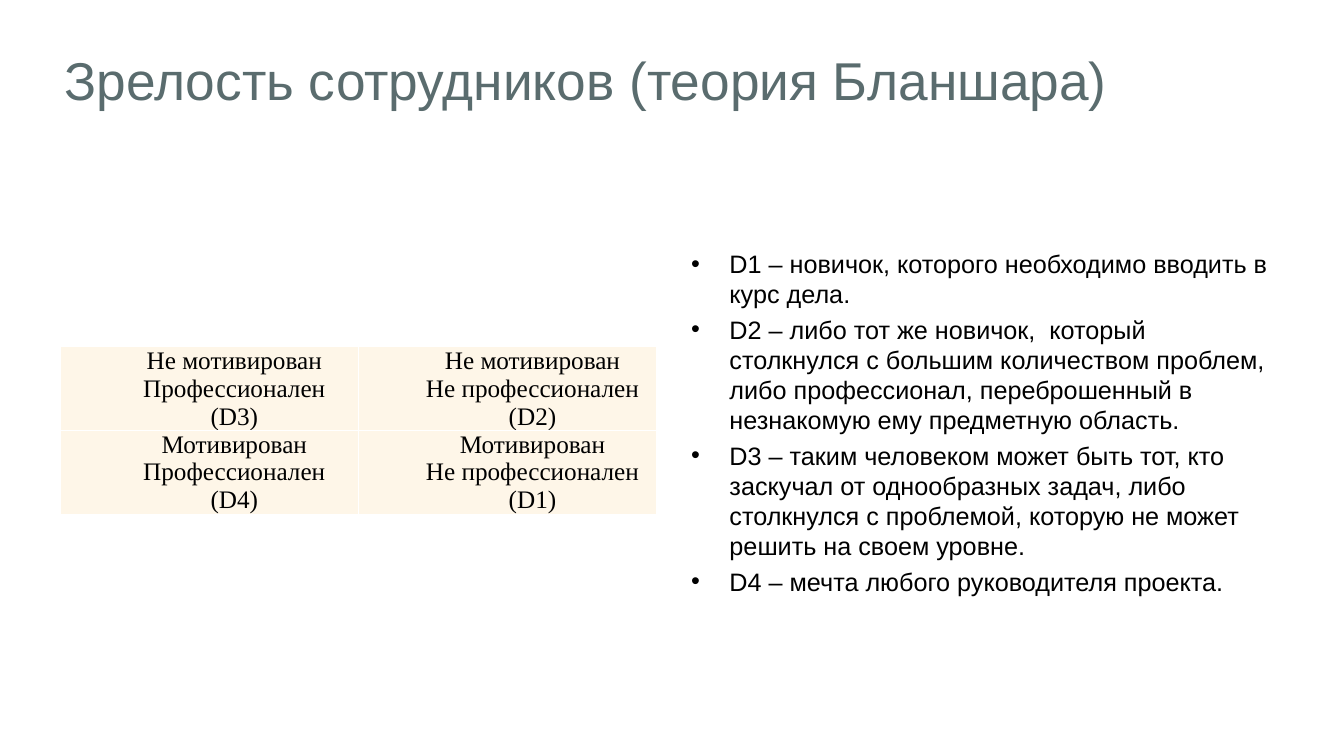
import pptx
import pptx.dml.color
import pptx.enum.text
import pptx.oxml
import pptx.oxml.ns
import pptx.util
from lxml import etree

Inches, Pt = pptx.util.Inches, pptx.util.Pt
ALIGN = pptx.enum.text.PP_ALIGN
MIDDLE = pptx.enum.text.MSO_ANCHOR.MIDDLE
qn = pptx.oxml.ns.qn

COLORS = {"title": "5A6C6E", "text": "000000", "cell": "FEF6E8", "border": "FFFFFF"}

W, H = 13.33, 7.5
MARGIN, GAP = 0.6, 0.3
COL_W = (W - 2 * MARGIN - GAP) / 2

TITLE = "Зрелость сотрудников (теория Бланшара)"
MATURITY = [
    [("Не мотивирован", "Профессионален", "(D3)"),
     ("Не мотивирован", "Не профессионален", "(D2)")],
    [("Мотивирован", "Профессионален", "(D4)"),
     ("Мотивирован", "Не профессионален", "(D1)")],
]
LEVELS = [
    "D1 – новичок, которого необходимо вводить в курс дела.",
    "D2 – либо тот же новичок,  который столкнулся с большим количеством проблем, "
    "либо профессионал, переброшенный в незнакомую ему предметную область.",
    "D3 – таким человеком может быть тот, кто заскучал от однообразных задач, либо "
    "столкнулся с проблемой, которую не может решить на своем уровне.",
    "D4 – мечта любого руководителя проекта.",
]


def rgb(name):
    return pptx.dml.color.RGBColor.from_string(COLORS[name])


def style_runs(p, size, font, color):
    for r in p.runs:
        r.font.size, r.font.name = Pt(size), font
        r.font.color.rgb = rgb(color)


def set_indent(p, left, first):
    pPr = p._p.get_or_add_pPr()
    pPr.set("marL", str(Inches(left)))
    pPr.set("indent", str(Inches(first)))
    return pPr


def fit_placeholder(sp, box):
    """Move a placeholder to the box and return its text frame."""
    sp.left, sp.top, sp.width, sp.height = map(Inches, box)
    tf = sp.text_frame
    tf.word_wrap = True
    tf.auto_size = pptx.enum.text.MSO_AUTO_SIZE.NONE
    tf.vertical_anchor = MIDDLE
    tf.margin_left = tf.margin_right = Inches(0.04)
    tf.margin_top = tf.margin_bottom = Inches(0.02)
    return tf


def fill_title(s, box):
    tf = fit_placeholder(s.shapes.title, box)
    tf.text = TITLE
    p = tf.paragraphs[0]
    p.alignment = ALIGN.LEFT
    style_runs(p, 38, "Arial", "title")


def fill_levels(s, box):
    tf = fit_placeholder(s.placeholders[1], box)
    tf.text = "\n".join(LEVELS)
    for i, p in enumerate(tf.paragraphs):
        pPr = set_indent(p, 0.38, -0.38)
        etree.SubElement(pPr, qn("a:buFont")).set("typeface", "Arial")
        etree.SubElement(pPr, qn("a:buChar")).set("char", "•")
        p.space_before = Pt(3.6 if i else 0)
        style_runs(p, 18, "Arial", "text")


def add_borders(cell):
    tcPr = cell._tc.get_or_add_tcPr()
    for i, side in enumerate(("a:lnL", "a:lnR", "a:lnT", "a:lnB")):
        ln = etree.Element(qn(side), w=str(Pt(1)))
        fill = etree.SubElement(ln, qn("a:solidFill"))
        etree.SubElement(fill, qn("a:srgbClr")).set("val", COLORS["border"])
        tcPr.insert(i, ln)


def fill_cell(cell, lines):
    cell.fill.solid()
    cell.fill.fore_color.rgb = rgb("cell")
    add_borders(cell)
    cell.vertical_anchor = MIDDLE
    cell.margin_left = cell.margin_right = Inches(0.07)
    cell.margin_top = cell.margin_bottom = 0
    cell.text_frame.text = "\n".join(lines)
    for p in cell.text_frame.paragraphs:
        p.alignment = ALIGN.CENTER
        set_indent(p, 0, 0.49)
        style_runs(p, 18, "Times New Roman", "text")


def add_maturity_table(s, box):
    rows, cols = len(MATURITY), len(MATURITY[0])
    table = s.shapes.add_table(rows, cols, *map(Inches, box)).table
    table.first_row = table.horz_banding = False
    for i, row in enumerate(MATURITY):
        for j, lines in enumerate(row):
            fill_cell(table.cell(i, j), lines)


def main():
    prs = pptx.Presentation()
    prs.slide_width, prs.slide_height = Inches(W), Inches(H)
    s = prs.slides.add_slide(prs.slide_layouts[1])
    fill_title(s, (MARGIN, 0.39, W - 2 * MARGIN, 0.79))
    add_maturity_table(s, (MARGIN, 3.44, COL_W, 1.66))
    fill_levels(s, (MARGIN + COL_W + GAP, 1.48, COL_W, 5.42))
    prs.save("out.pptx")


if __name__ == "__main__":
    main()
